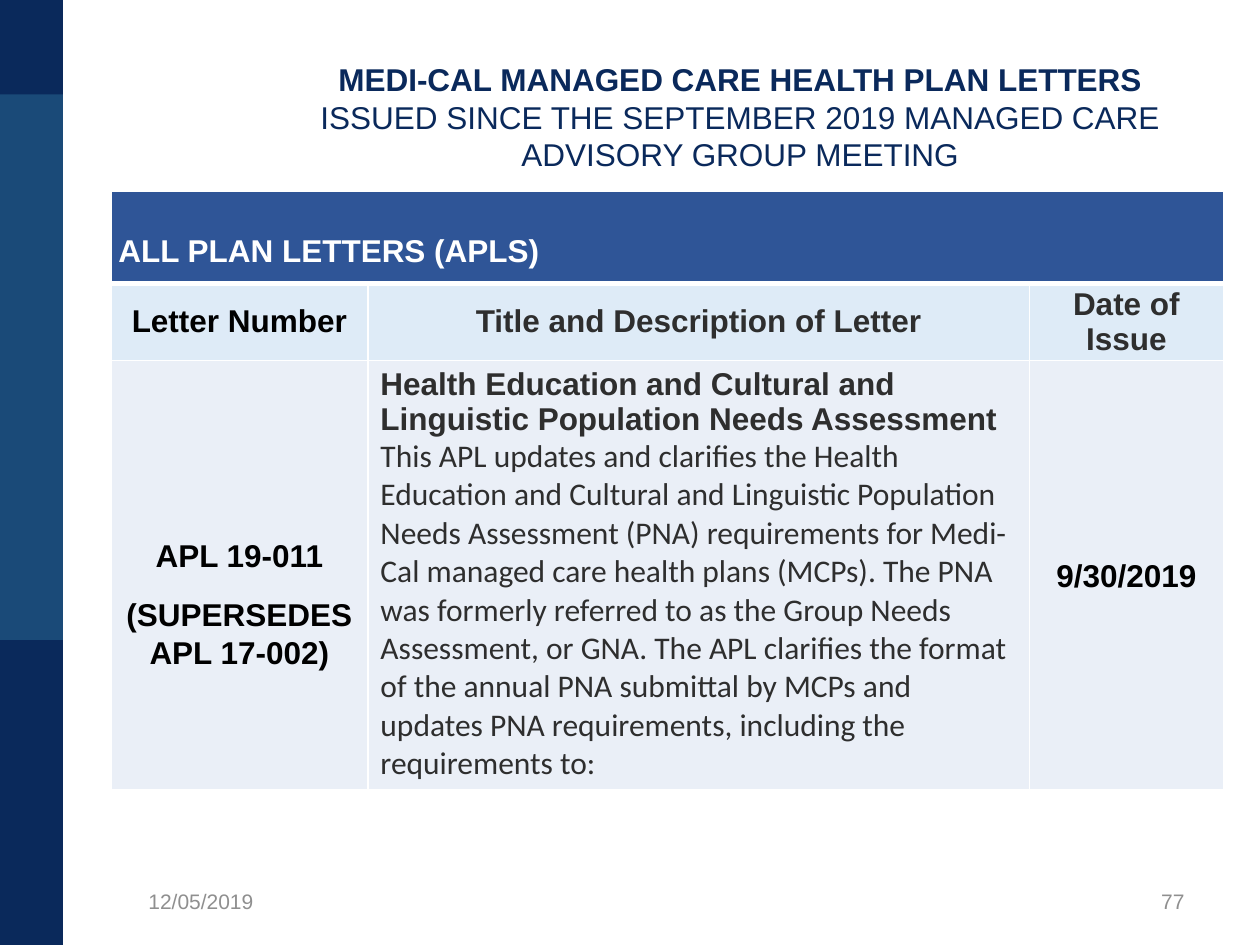
from pptx import Presentation
from pptx.dml.color import RGBColor
from pptx.enum.shapes import MSO_SHAPE as Shape
from pptx.enum.text import MSO_ANCHOR as Anchor, PP_ALIGN as Align
from pptx.oxml import parse_xml
from pptx.oxml.ns import nsdecls
from pptx.util import Inches, Pt

NAVY = RGBColor(0x0A, 0x29, 0x5B)
BLUE = RGBColor(0x1A, 0x4A, 0x78)
BANNER = RGBColor(0x2F, 0x55, 0x97)
HEADING = RGBColor(0xDE, 0xEB, 0xF7)
BODY = RGBColor(0xEA, 0xEF, 0xF7)
WHITE = RGBColor(0xFF, 0xFF, 0xFF)
BLACK = RGBColor(0, 0, 0)
CHARCOAL = RGBColor(0x2E, 0x2E, 0x2E)
GRAY = RGBColor(0x8F, 0x8F, 0x8F)


def add_run(paragraph, text, color, bold=True, size=18, font="Arial"):
    run = paragraph.add_run()
    run.text = text
    run.font.name = font
    run.font.size = Pt(size)
    run.font.bold = bold
    run.font.color.rgb = color


def style_cell(cell, fill, margins, top=1, bottom=1):
    cell.fill.solid()
    cell.fill.fore_color.rgb = fill
    cell.vertical_anchor = Anchor.MIDDLE
    cell.margin_left = cell.margin_right = Inches(margins[0])
    cell.margin_top = cell.margin_bottom = Inches(margins[1])
    borders = (("lnL", 1), ("lnR", 1), ("lnT", top), ("lnB", bottom))
    for position, (side, width) in enumerate(borders):
        cell._tc.get_or_add_tcPr().insert(position, parse_xml(
            f'<a:{side} {nsdecls("a")} w="{Pt(width)}"><a:solidFill>'
            f'<a:srgbClr val="{WHITE}"/></a:solidFill></a:{side}>'))


prs = Presentation()
prs.slide_width, prs.slide_height = Inches(10), Inches(7.5)
slide = prs.slides.add_slide(prs.slide_layouts[6])

# Side band
for top, height, color in ((0, 7.5, BLUE), (0, 0.75, NAVY), (5.08, 2.42, NAVY)):
    band = slide.shapes.add_shape(
        Shape.RECTANGLE, 0, Inches(top), Inches(0.5), Inches(height))
    band.shadow.inherit = False
    band.fill.solid()
    band.fill.fore_color.rgb = color
    band.line.fill.background()

# Table of letters
letters = slide.shapes.add_table(
    3, 3, Inches(0.88), Inches(1.52), Inches(8.83), Inches(4.74)).table
for column, width in zip(letters.columns, (2.04, 5.25, 1.54)):
    column.width = Inches(width)
for row, height in zip(letters.rows, (0.73, 0.61, 3.4)):
    row.height = Inches(height)

# Banner row
for cell in letters.rows[0].cells:
    style_cell(cell, BANNER, (0.06, 0), bottom=3)
banner = letters.cell(0, 0)
banner.merge(letters.cell(0, 2))
banner.margin_top = Inches(0.23)
add_run(banner.text_frame.paragraphs[0], "ALL PLAN LETTERS (APLS)", WHITE)

# Column headings
headings = (("Letter Number", BLACK), ("Title and Description of Letter", CHARCOAL),
            ("Date of Issue", CHARCOAL))
for cell, (text, color) in zip(letters.rows[1].cells, headings):
    style_cell(cell, HEADING, (0.06, 0), top=3)
    heading = cell.text_frame.paragraphs[0]
    heading.alignment = Align.CENTER
    add_run(heading, text, color)

# Letter entry
number, description, issued = letters.rows[2].cells
for cell in (number, description, issued):
    style_cell(cell, BODY, (0.1, 0.05))

number.margin_top = Inches(0.51)
letter = number.text_frame.paragraphs[0]
superseded = number.text_frame.add_paragraph()
superseded.space_before = Pt(12)
issue_date = issued.text_frame.paragraphs[0]
for paragraph, text in ((letter, "APL 19-011"),
                        (superseded, "(SUPERSEDES APL 17-002)"),
                        (issue_date, "9/30/2019")):
    paragraph.alignment = Align.CENTER
    paragraph.line_spacing = 1.08
    add_run(paragraph, text, BLACK)

add_run(description.text_frame.paragraphs[0],
        "Health Education and Cultural and Linguistic Population Needs Assessment",
        CHARCOAL)
add_run(description.text_frame.add_paragraph(),
        "This APL updates and clarifies the Health Education and Cultural and "
        "Linguistic Population Needs Assessment (PNA) requirements for Medi-Cal "
        "managed care health plans (MCPs). The PNA was formerly referred to as the "
        "Group Needs Assessment, or GNA. The APL clarifies the format of the annual "
        "PNA submittal by MCPs and updates PNA requirements, including the "
        "requirements to:", CHARCOAL, bold=False, font="Calibri")

# Title, date and page number
texts = (
    (2, 0.3, 7.75, 1.25, Align.CENTER, NAVY, 18,
     (("MEDI-CAL MANAGED CARE HEALTH PLAN LETTERS", True),
      ("ISSUED SINCE THE SEPTEMBER 2019 MANAGED CARE ADVISORY GROUP MEETING", False))),
    (1.08, 6.95, 2.33, 0.4, Align.LEFT, GRAY, 12, (("12/05/2019", False),)),
    (7.17, 6.95, 2.33, 0.4, Align.RIGHT, GRAY, 12, (("77", False),)),
)
for left, top, width, height, align, color, size, lines in texts:
    frame = slide.shapes.add_textbox(
        Inches(left), Inches(top), Inches(width), Inches(height)).text_frame
    frame.word_wrap = True
    frame.vertical_anchor = Anchor.MIDDLE
    paragraph = frame.paragraphs[0]
    paragraph.alignment = align
    for index, (text, bold) in enumerate(lines):
        if index:
            paragraph.add_line_break()
        add_run(paragraph, text, color, bold, size)

prs.save("out.pptx")
